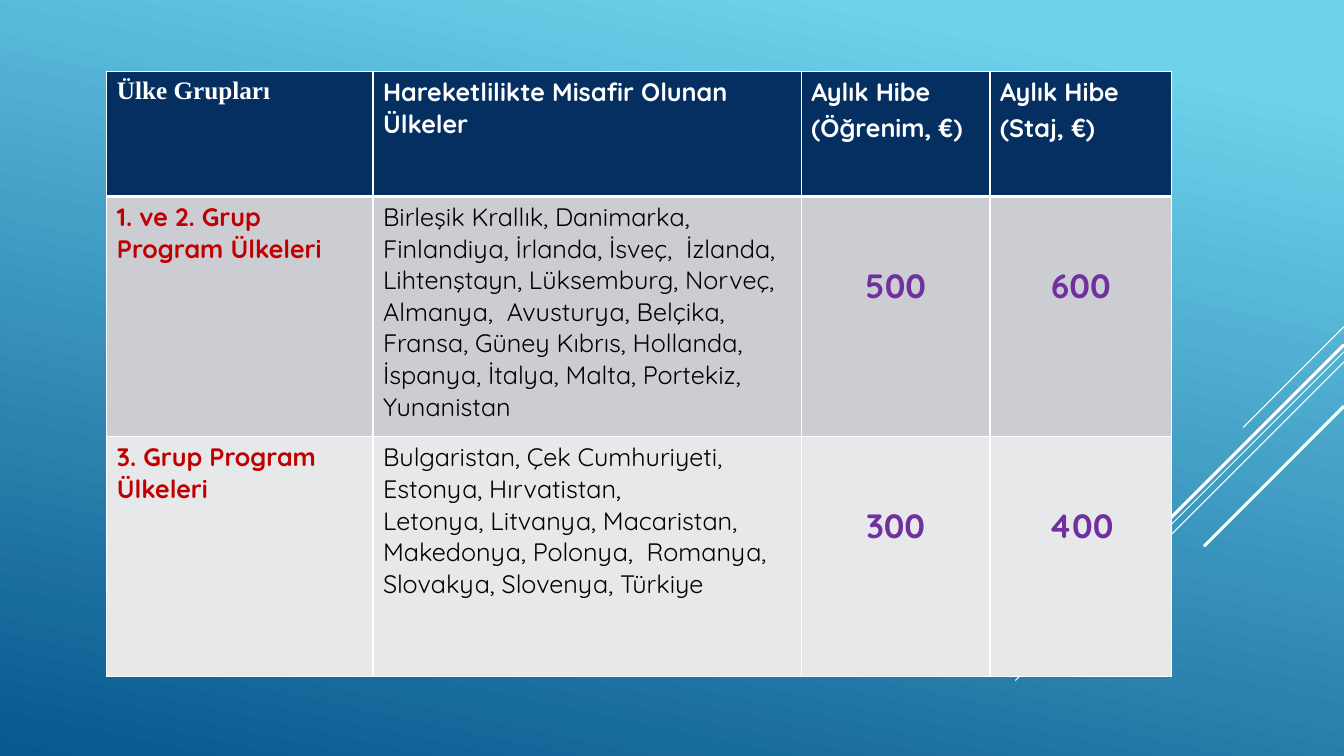
from lxml import etree
from pptx import Presentation
from pptx.dml.color import RGBColor
from pptx.enum import shapes, text
from pptx.oxml import ns
from pptx.util import Pt

# Content
HEADERS = ["Ülke Grupları", "Hareketlilikte Misafir Olunan Ülkeler",
           "Aylık Hibe (Öğrenim, €)", "Aylık Hibe (Staj, €)"]
GROUPS = [
    ("1. ve 2. Grup Program Ülkeleri",
     "Birleşik Krallık, Danimarka, Finlandiya, İrlanda, İsveç,  İzlanda, "
     "Lihtenştayn, Lüksemburg, Norveç, Almanya,  Avusturya, Belçika, Fransa, "
     "Güney Kıbrıs, Hollanda,  İspanya, İtalya, Malta, Portekiz, Yunanistan",
     "500", "600"),
    ("3. Grup Program Ülkeleri",
     "Bulgaristan, Çek Cumhuriyeti, Estonya, Hırvatistan,\n"
     "Letonya, Litvanya, Macaristan, Makedonya, Polonya,  Romanya, "
     "Slovakya, Slovenya, Türkiye",
     "300", "400"),
]

# Layout and style, in points
SLIDE_W, SLIDE_H = 960, 540
TABLE_LEFT, TABLE_TOP = 76.3, 51.1
COL_WIDTHS = [190.1, 306, 134.8, 129.8]
ROW_HEIGHTS = [89.2, 171.6, 171.6]
AMOUNT_TOP = 49
RAYS = [(233.3, 72, 0.75), (251.3, 234.7, 0.75), (258.5, 149.2, 0.75),
        (246.2, 137.7, 2.25), (290.2, 100, 2.25)]  # right-edge y, run, width

WHITE = RGBColor(0xFF, 0xFF, 0xFF)
BLACK = RGBColor(0, 0, 0)
NAVY = RGBColor(0x05, 0x2F, 0x61)
RED = RGBColor(0xC0, 0, 0)
PURPLE = RGBColor(0x70, 0x30, 0xA0)
SKY = RGBColor(0x6E, 0xD2, 0xEB)
DEEP_BLUE = RGBColor(0x06, 0x58, 0x8E)
ROW_FILLS = [NAVY, RGBColor(0xCC, 0xCD, 0xD2), RGBColor(0xE7, 0xE8, 0xEA)]
FONT, EURO_FONT, FIRST_FONT = "Quicksand", "Noto Sans CJK JP", "Times New Roman"
# Colour, size and weight of each body column
BODY_STYLES = [(RED, 18, True), (BLACK, 18, False),
               (PURPLE, 24, True), (PURPLE, 24, True)]


def add_border(cell, side, width):
    ln = etree.SubElement(cell._tc.get_or_add_tcPr(), ns.qn("a:ln" + side),
                          w=str(Pt(width)))
    fill = etree.SubElement(ln, ns.qn("a:solidFill"))
    etree.SubElement(fill, ns.qn("a:srgbClr"), val=str(WHITE))


def add_run(p, words, font, color, size, bold):
    r = p.add_run()
    r.text = words
    r.font.name, r.font.size, r.font.bold = font, Pt(size), bold
    r.font.color.rgb = color


def fill_cell(cell, row, col, words):
    header = row == 0
    for side in "LRTB":
        heavy = (row, side) in ((0, "B"), (1, "T"))
        add_border(cell, side, 3 if heavy else 1)
    cell.fill.solid()
    cell.fill.fore_color.rgb = ROW_FILLS[row]
    style = (WHITE, 18, True) if header else BODY_STYLES[col]
    font = FIRST_FONT if header and col == 0 else FONT
    amount = not header and col >= 2
    if amount:
        cell.margin_top = Pt(AMOUNT_TOP)
    tf = cell.text_frame
    for i, line in enumerate(words.split("\n")):
        p = tf.add_paragraph() if i else tf.paragraphs[0]
        if amount:
            p.alignment = text.PP_ALIGN.CENTER
        before, euro, after = line.partition("€")
        for part, part_font in ((before, font), (euro, EURO_FONT), (after, font)):
            if part:
                add_run(p, part, part_font, *style)


prs = Presentation()
prs.slide_width, prs.slide_height = Pt(SLIDE_W), Pt(SLIDE_H)
s = prs.slides.add_slide(prs.slide_layouts[6])

# Background
bg = s.background.fill
bg.gradient()
bg.gradient_angle = 258
for stop, position, color in zip(bg.gradient_stops, (0.1, 1), (SKY, DEEP_BLUE)):
    stop.position = position
    stop.color.rgb = color

# Diagonal rays from the right edge, all at 45 degrees
for y, run, width in RAYS:
    ray = s.shapes.add_connector(shapes.MSO_CONNECTOR.STRAIGHT, Pt(SLIDE_W), Pt(y),
                                 Pt(SLIDE_W - run), Pt(y + run))
    ray.line.color.rgb = WHITE
    ray.line.width = Pt(width)
    etree.SubElement(ray._element.spPr, ns.qn("a:effectLst"))

# Grant table
table = s.shapes.add_table(len(ROW_HEIGHTS), len(COL_WIDTHS), Pt(TABLE_LEFT),
                           Pt(TABLE_TOP), Pt(sum(COL_WIDTHS)),
                           Pt(sum(ROW_HEIGHTS))).table
for column, width in zip(table.columns, COL_WIDTHS):
    column.width = Pt(width)
for row, (height, entries) in enumerate(zip(ROW_HEIGHTS, [HEADERS, *GROUPS])):
    table.rows[row].height = Pt(height)
    for col, words in enumerate(entries):
        fill_cell(table.cell(row, col), row, col, words)

prs.save("out.pptx")
